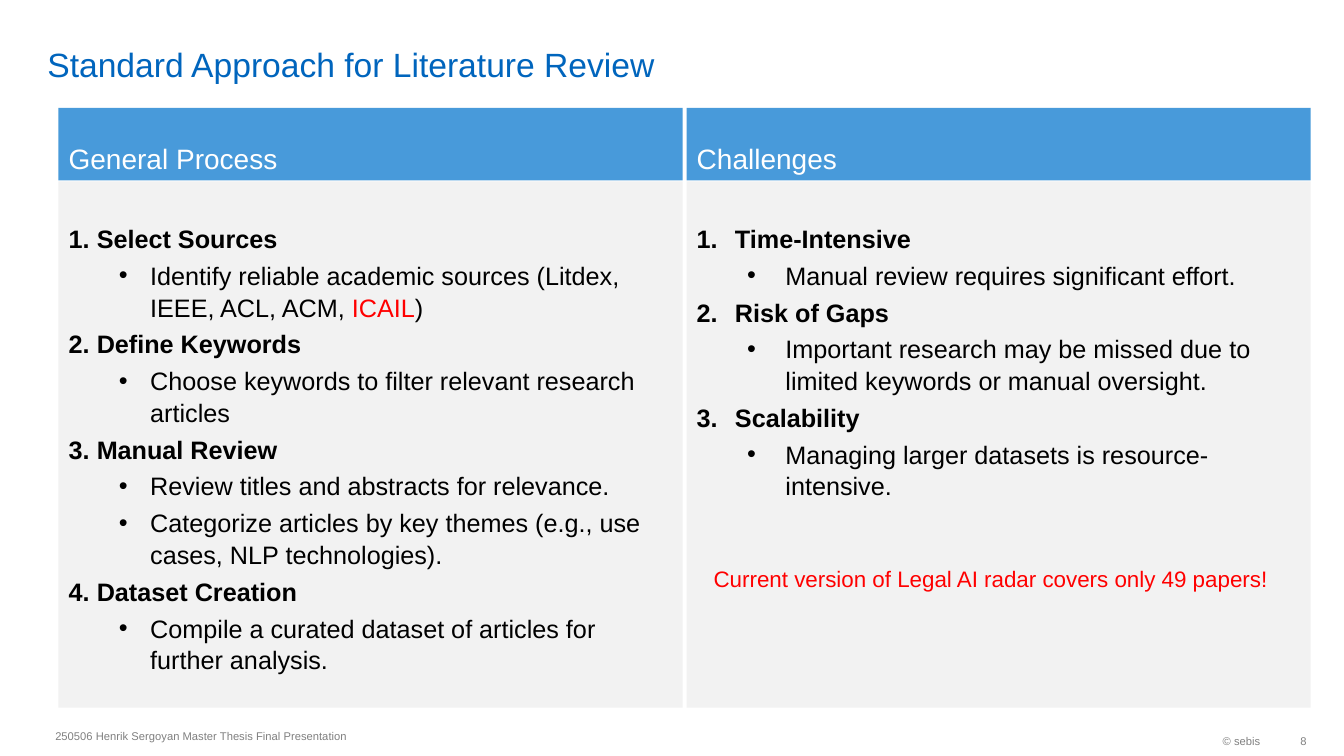
from dataclasses import dataclass

from lxml import etree
from pptx import Presentation
from pptx import util as u
from pptx.dml.color import RGBColor
from pptx.enum import text
from pptx.oxml import ns

FONT = "Arial"
BLACK, WHITE, RED, GREY = "000000", "FFFFFF", "FF0000", "808080"
TITLE_BLUE, HEADER_BLUE, PANEL_GREY = "0065BD", "489ADA", "F2F2F2"
LEFT, CENTER_Y = text.PP_ALIGN.LEFT, text.MSO_ANCHOR.MIDDLE


@dataclass
class Box:
    left: float
    top: float
    width: float
    height: float


@dataclass
class Step:
    heading: str
    details: list[str]


@dataclass
class Column:
    header: str
    left: float
    number_indent: float
    detail_indent: float
    detail_hanging: float
    steps: list[Step]
    highlight: str = ""


@dataclass
class Label:
    wording: str
    box: Box
    size: int
    color: str
    align: text.PP_ALIGN = LEFT
    anchor: text.MSO_ANCHOR = CENTER_Y
    right_inset: float = 0.1


COLUMNS = [
    Column("General Process", 0.58, 0.28, 0.81, 0.31, [
        Step("Select Sources", ["Identify reliable academic sources (Litdex, IEEE, ACL, ACM, ICAIL)"]),
        Step("Define Keywords", ["Choose keywords to filter relevant research articles"]),
        Step("Manual Review", [
            "Review titles and abstracts for relevance.",
            "Categorize articles by key themes (e.g., use cases, NLP technologies).",
        ]),
        Step("Dataset Creation", ["Compile a curated dataset of articles for further analysis."]),
    ], "ICAIL"),
    Column("Challenges", 6.81, 0.38, 0.88, 0.38, [
        Step("Time-Intensive", ["Manual review requires significant effort."]),
        Step("Risk of Gaps", ["Important research may be missed due to limited keywords or manual oversight."]),
        Step("Scalability", ["Managing larger datasets is resource-intensive."]),
    ]),
]

LABELS = [
    Label("© sebis", Box(10.26, 7.19, 2.34, 0.32), 8, GREY, text.PP_ALIGN.RIGHT),
    Label("8", Box(12.6, 7.19, 0.36, 0.32), 8, GREY, text.PP_ALIGN.RIGHT, right_inset=0),
    Label("Current version of Legal AI radar covers only 49 papers!",
          Box(6.98, 5.56, 6.16, 0.64), 16, RED, anchor=text.MSO_ANCHOR.TOP),
    Label("250506 Henrik Sergoyan Master Thesis Final Presentation",
          Box(0.45, 7.14, 6.3, 0.32), 8, GREY),
]


def rgb(color: str) -> RGBColor:
    return RGBColor.from_string(color)


def place(shape, box: Box) -> None:
    shape.left, shape.top = u.Inches(box.left), u.Inches(box.top)
    shape.width, shape.height = u.Inches(box.width), u.Inches(box.height)


def fill(shape, color: str) -> None:
    shape.fill.solid()
    shape.fill.fore_color.rgb = rgb(color)


def set_frame(frame, anchor, top: float = 0.05, bottom: float = 0.05, right: float = 0.1) -> None:
    frame.word_wrap = True
    frame.auto_size = text.MSO_AUTO_SIZE.NONE
    frame.vertical_anchor = anchor
    frame.margin_left, frame.margin_right = u.Inches(0.1), u.Inches(right)
    frame.margin_top, frame.margin_bottom = u.Inches(top), u.Inches(bottom)


def format_run(run, size: int, color: str, bold: bool = False) -> None:
    run.font.name, run.font.size, run.font.bold = FONT, u.Pt(size), bold
    run.font.color.rgb = rgb(color)


def write_line(frame, wording: str, size: int, color: str, align=LEFT) -> None:
    frame.text = wording
    paragraph = frame.paragraphs[0]
    paragraph.alignment = align
    paragraph.space_before = u.Pt(0)
    format_run(paragraph.runs[0], size, color)


def set_bullet(paragraph, indent: float, hanging: float, tag: str, **attributes: str) -> None:
    properties = paragraph._p.get_or_add_pPr()
    properties.set("marL", str(u.Inches(indent)))
    properties.set("indent", str(-u.Inches(hanging)))
    if tag == "a:buChar":
        etree.SubElement(properties, ns.qn("a:buFont"), typeface=FONT)
    etree.SubElement(properties, ns.qn(tag), **attributes)


def add_item(frame, wording: str, level: int, highlight: str = ""):
    first = not frame.text
    paragraph = frame.paragraphs[0] if first else frame.add_paragraph()
    paragraph.level = level
    paragraph.alignment = LEFT
    paragraph.line_spacing = 1.05
    paragraph.space_before = u.Pt(0 if first else 3.6)
    pieces = wording.partition(highlight) if highlight else (wording,)
    for piece in filter(None, pieces):
        run = paragraph.add_run()
        run.text = piece
        format_run(run, 18, RED if piece == highlight else BLACK, level == 0)
    return paragraph


def draw_column(column: Column, header, panel) -> None:
    place(header, Box(column.left, 1.07, 6.19, 0.72))
    fill(header, HEADER_BLUE)
    set_frame(header.text_frame, text.MSO_ANCHOR.BOTTOM)
    write_line(header.text_frame, column.header, 20, WHITE)

    place(panel, Box(column.left, 1.8, 6.19, 5.22))
    fill(panel, PANEL_GREY)
    set_frame(panel.text_frame, text.MSO_ANCHOR.TOP, top=0.4)
    for step in column.steps:
        heading = add_item(panel.text_frame, step.heading, 0)
        set_bullet(heading, column.number_indent, column.number_indent,
                   "a:buAutoNum", type="arabicPeriod")
        for wording in step.details:
            detail = add_item(panel.text_frame, wording, 1, column.highlight)
            set_bullet(detail, column.detail_indent, column.detail_hanging,
                       "a:buChar", char="•")


def draw_label(slide, label: Label) -> None:
    shape = slide.shapes.add_textbox(0, 0, 0, 0)
    place(shape, label.box)
    set_frame(shape.text_frame, label.anchor, right=label.right_inset)
    write_line(shape.text_frame, label.wording, label.size, label.color, label.align)


def main() -> None:
    presentation = Presentation()
    presentation.slide_width, presentation.slide_height = u.Inches(13.33), u.Inches(7.5)
    slide = presentation.slides.add_slide(presentation.slide_layouts.get_by_name("Comparison"))

    title, *bodies = slide.placeholders
    place(title, Box(0.37, 0.29, 11.58, 0.55))
    set_frame(title.text_frame, text.MSO_ANCHOR.BOTTOM, top=0, bottom=0)
    write_line(title.text_frame, "Standard Approach for Literature Review", 24, TITLE_BLUE)

    for column, header, panel in zip(COLUMNS, bodies[::2], bodies[1::2]):
        draw_column(column, header, panel)
    for label in LABELS:
        draw_label(slide, label)
    presentation.save("out.pptx")


if __name__ == "__main__":
    main()
